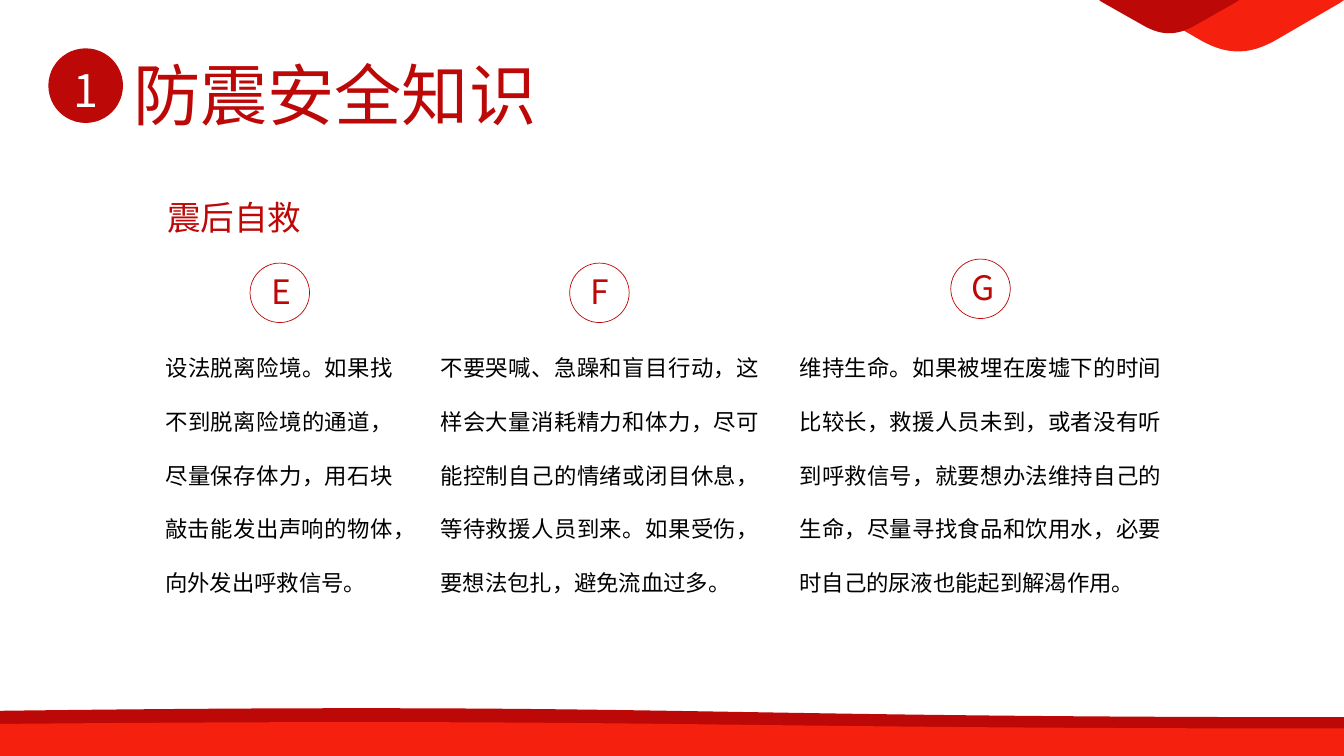
import pptx
import pptx.util
import pptx.dml.color
import pptx.enum.shapes
import pptx.enum.text
import pptx.oxml.ns
import lxml.etree

Inches = pptx.util.Inches
Pt = pptx.util.Pt
SHAPE = pptx.enum.shapes.MSO_SHAPE
ALIGN = pptx.enum.text.PP_ALIGN
ANCHOR = pptx.enum.text.MSO_ANCHOR
FIT = pptx.enum.text.MSO_AUTO_SIZE

COLORS = {"dark": "BC0807", "red": "F5200E", "white": "FFFFFF", "black": "000000"}
JP = "Noto Sans CJK JP"
SC = "Noto Sans CJK SC"
WIDE, HIGH = 13.33, 7.5

STEPS = [
    ("E", (1.54, 3.2, 2.46, 2.79), (2.48, 2.61),
     "设法脱离险境。如果找不到脱离险境的通道，尽量保存体力，用石块敲击能发出声响的物体，向外发出呼救信号。"),
    ("F", (4.27, 3.2, 3.36, 2.79), (5.65, 2.61),
     "不要哭喊、急躁和盲目行动，这样会大量消耗精力和体力，尽可能控制自己的情绪或闭目休息，等待救援人员到来。如果受伤，要想法包扎，避免流血过多。"),
    ("G", (7.83, 3.2, 3.79, 2.79), (9.43, 2.57),
     "维持生命。如果被埋在废墟下的时间比较长，救援人员未到，或者没有听到呼救信号，就要想办法维持自己的生命，尽量寻找食品和饮用水，必要时自己的尿液也能起到解渴作用。"),
]


def color(name):
    return pptx.dml.color.RGBColor.from_string(COLORS[name])


def paint(shape, name):
    shape.shadow.inherit = False
    shape.fill.solid()
    shape.fill.fore_color.rgb = color(name)
    shape.line.fill.background()


def write(shape, text, size, face, tint, align, space=None):
    frame = shape.text_frame
    frame.word_wrap = True
    para = frame.paragraphs[0]
    para.alignment = align
    if space:
        para.line_spacing = space
    run = para.add_run()
    run.text = text
    run.font.size = Pt(size)
    run.font.name = face
    run.font.color.rgb = color(tint)
    east = lxml.etree.Element(pptx.oxml.ns.qn("a:ea"), typeface=face)
    run.font._element.find(pptx.oxml.ns.qn("a:latin")).addnext(east)


def add_text(shapes, box, *style):
    label = shapes.add_textbox(*map(Inches, box))
    write(label, *style)


def add_wave(slide, box, tint):
    wave = slide.shapes.add_shape(SHAPE.FLOWCHART_DOCUMENT, *map(Inches, box))
    paint(wave, tint)
    wave._element.spPr.find(pptx.oxml.ns.qn("a:xfrm")).set("flipV", "1")


def bezier(points, count=12):
    a, b, c, d = points
    for step in range(count + 1):
        t = step / count
        u = 1 - t
        yield tuple(u**3 * p + 3 * u * u * t * q + 3 * u * t * t * r + t**3 * s
                    for p, q, r, s in zip(a, b, c, d))


def add_tab(slide, box, tint):
    left, top, width, height = box
    half = list(bezier([(0.5, 1), (0.56, 1), (0.61, 0.93), (0.67, 0.8)]))
    half += [(0.98, 0.06), (1, 0)]
    edge = half + [(1 - x, y) for x, y in reversed(half)]
    spots = [(Inches(left + x * width), Inches(top + y * height)) for x, y in edge]
    form = slide.shapes.build_freeform(*spots[0], scale=1.0)
    form.add_line_segments(spots[1:], close=True)
    paint(form.convert_to_shape(), tint)


def add_frame(slide, box):
    left, top, width, height = box
    right, base = left + width, top + height
    for tall, tint in ((0.48, "dark"), (0.34, "red")):
        add_wave(slide, (left, base - tall, width, tall), tint)
    add_tab(slide, (right - 2.1, top, 2.1, 0.51), "red")
    add_tab(slide, (right - 2.43, top, 1.39, 0.33), "dark")


def add_head(slide, box):
    left, top, width, height = box
    disc = 0.74
    title = slide.shapes.title
    title.left, title.top = Inches(left + disc), Inches(top)
    title.width, title.height = Inches(width - disc), Inches(height)
    title.text_frame.auto_size = FIT.NONE
    title.text_frame.vertical_anchor = ANCHOR.TOP
    write(title, "防震安全知识", 48, JP, "dark", ALIGN.LEFT)
    badge = slide.shapes.add_shape(SHAPE.OVAL, *map(Inches, (left, top, disc, disc)))
    paint(badge, "dark")
    badge.text_frame.margin_top = Inches(0.12)
    badge.text_frame.vertical_anchor = ANCHOR.MIDDLE
    write(badge, "1", 32, JP, "white", ALIGN.CENTER)


def add_badge(slide, box, text):
    left, top, width, height = box
    group = slide.shapes.add_group_shape()
    add_text(group.shapes, (left + 0.11, top + 0.03, 0.37, 0.5),
             text, 24, SC, "dark", ALIGN.CENTER)
    ring = group.shapes.add_shape(SHAPE.OVAL, *map(Inches, box))
    ring.shadow.inherit = False
    ring.fill.background()
    ring.line.color.rgb = color("dark")
    ring.line.width = Pt(0.5)


def add_step(slide, box, spot, letter, text):
    add_text(slide.shapes, box, text, 16, JP, "black", ALIGN.JUSTIFY, 2.0)
    add_badge(slide, (*spot, 0.59, 0.59), letter)


def main():
    deck = pptx.Presentation()
    deck.slide_width, deck.slide_height = Inches(WIDE), Inches(HIGH)
    slide = deck.slides.add_slide(deck.slide_layouts[5])
    add_frame(slide, (0, 0, WIDE, HIGH))
    add_head(slide, (0.48, 0.48, 5.13, 0.91))
    add_text(slide.shapes, (1.56, 1.9, 3.37, 0.45),
             "震后自救", 24, SC, "dark", ALIGN.JUSTIFY)
    for letter, box, spot, text in STEPS:
        add_step(slide, box, spot, letter, text)
    deck.save("out.pptx")


if __name__ == "__main__":
    main()
